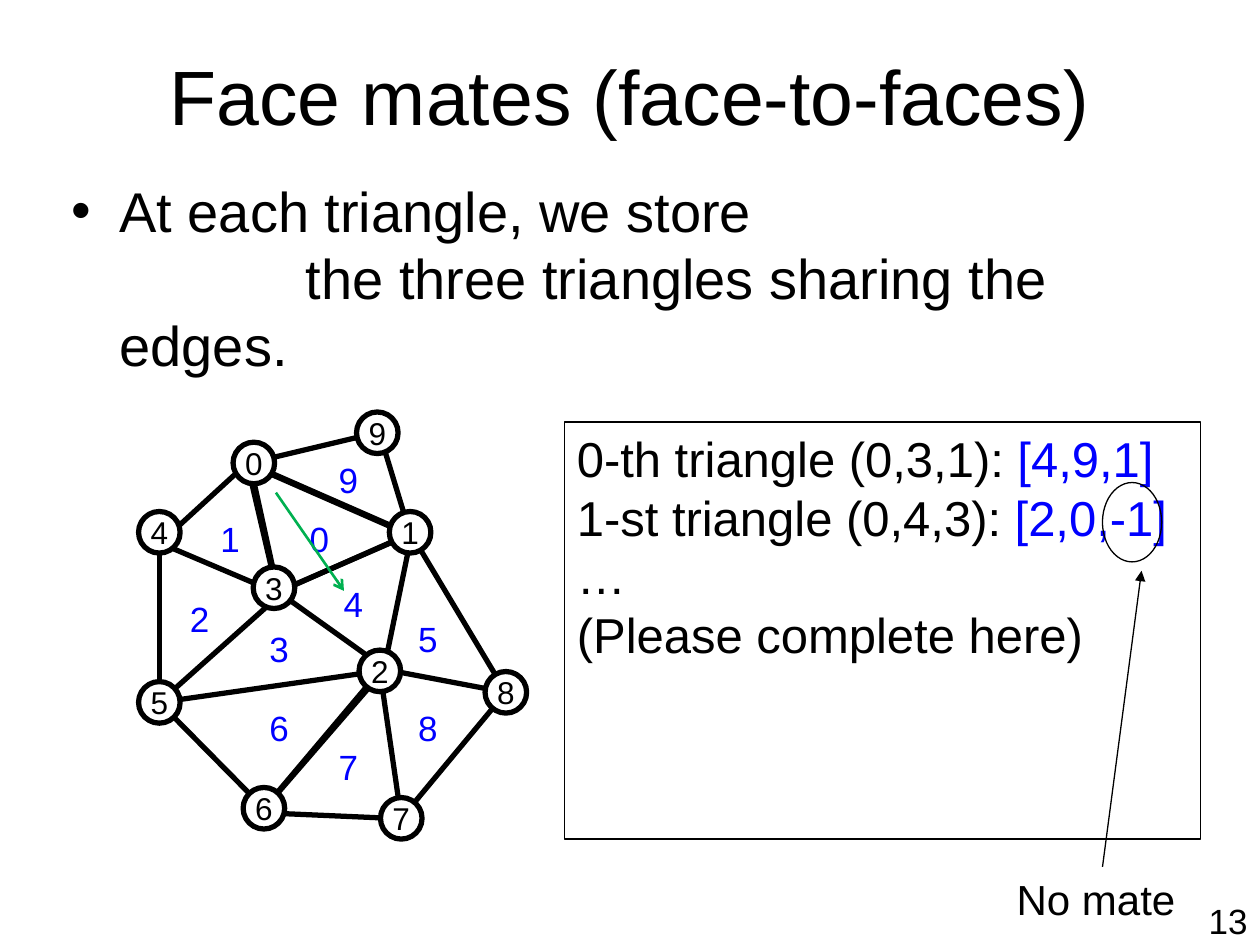
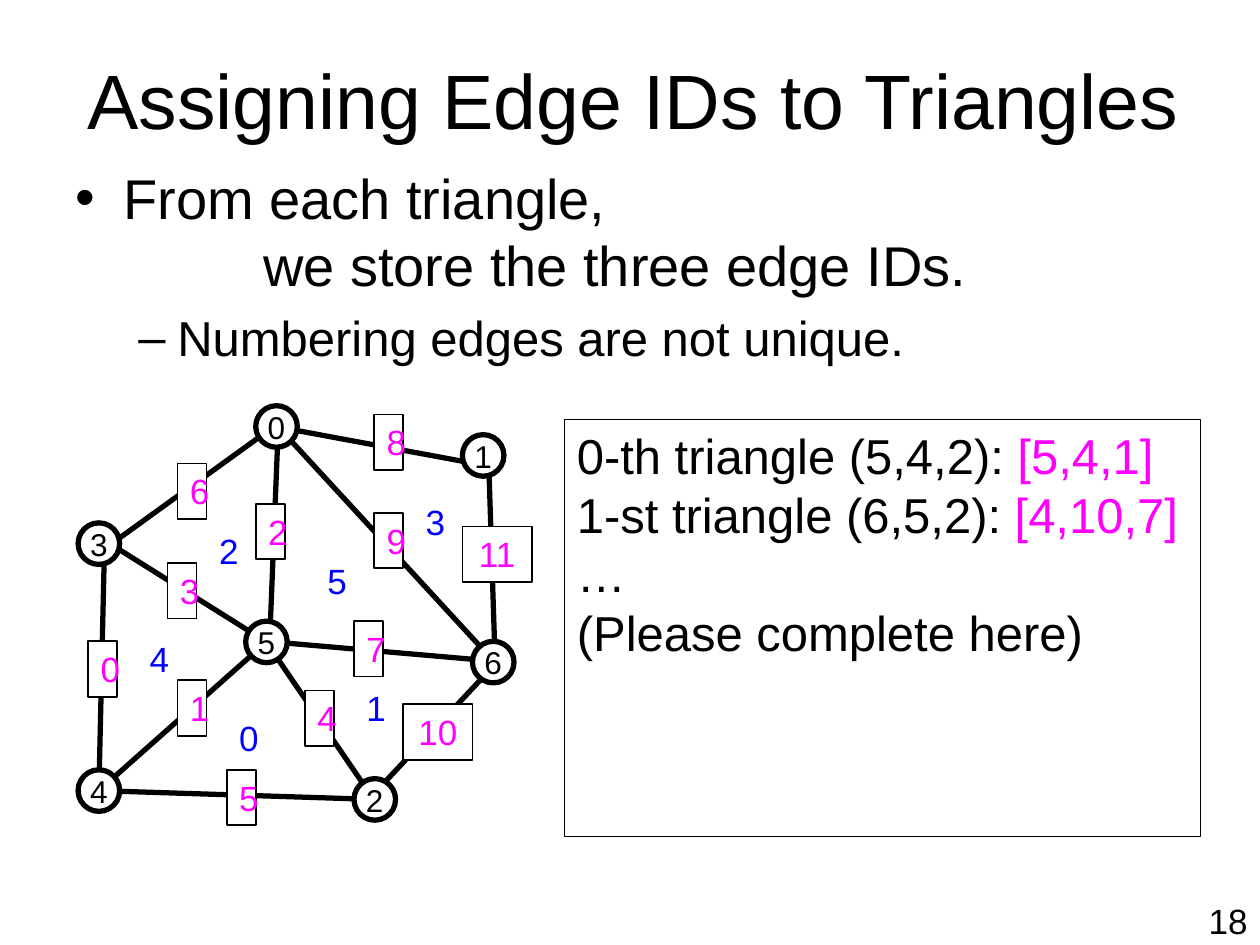
import dataclasses

import lxml.etree
import pptx
import pptx.dml.color
import pptx.enum.shapes
import pptx.enum.text
import pptx.oxml.ns
import pptx.util

SHAPE = pptx.enum.shapes.MSO_SHAPE
ALIGN = pptx.enum.text.PP_ALIGN
MIDDLE = pptx.enum.text.MSO_ANCHOR.MIDDLE
TOP = pptx.enum.text.MSO_ANCHOR.TOP
GROW = pptx.enum.text.MSO_AUTO_SIZE.SHAPE_TO_FIT_TEXT
qn = pptx.oxml.ns.qn
COLS = 100
NODE = 3.3


@dataclasses.dataclass(frozen=True)
class Theme:
    font: str = "Arial"
    ink: str = "000000"
    paper: str = "FFFFFF"
    face: str = "0000FF"
    edge: str = "FF00FF"
    hint: str = "00B050"
    title: int = 44
    body: int = 32
    sub: int = 28
    note: int = 24
    label: int = 20
    node: int = 18
    thick: float = 3
    hair: float = 0.75


class Deck:
    """Draws on the current slide; lengths are cells, 100 across and 75 down."""

    def __init__(self, theme):
        self.theme = theme
        self.file = pptx.Presentation()
        self.file.slide_width = pptx.util.Inches(10)
        self.file.slide_height = pptx.util.Inches(7.5)
        self.cell = self.file.slide_width // COLS

    def start(self, title, left, top, page):
        self.slide = self.file.slides.add_slide(self.file.slide_layouts[6])
        self.shapes = self.slide.shapes
        theme = self.theme
        self.text(title, (left, top, 90, 12.5), theme.title, align=ALIGN.CENTER,
                  anchor=MIDDLE, wrap=True)
        self.text(str(page), (76.7, 70.9, 23.3, 5.2), theme.label,
                  align=ALIGN.RIGHT, wrap=True)

    def size(self, *cells):
        return [pptx.util.Emu(round(n * self.cell)) for n in cells]

    def color(self, name):
        return pptx.dml.color.RGBColor.from_string(name)

    def style(self, run, size, color):
        run.font.name = self.theme.font
        run.font.size = pptx.util.Pt(size)
        run.font.color.rgb = self.color(color)

    def label(self, shape, words, size, color, align, anchor, wrap):
        frame = shape.text_frame
        frame.text = words
        frame.word_wrap = wrap
        frame.vertical_anchor = anchor
        para = frame.paragraphs[0]
        para.alignment = align
        self.style(para.runs[0], size, color)

    def text(self, words, place, size, color=None, align=ALIGN.LEFT,
             anchor=TOP, wrap=False):
        box = self.shapes.add_textbox(*self.size(*place))
        self.label(box, words, size, color or self.theme.ink, align, anchor, wrap)
        if not wrap:
            box.text_frame.auto_size = GROW

    def stroke(self, line, width, color=None):
        line.color.rgb = self.color(color or self.theme.ink)
        line.width = pptx.util.Pt(width)

    def shape(self, kind, place, width, filled=True):
        shape = self.shapes.add_shape(kind, *self.size(*place))
        shape.shadow.inherit = False
        if filled:
            shape.fill.solid()
            shape.fill.fore_color.rgb = self.color(self.theme.paper)
        else:
            shape.fill.background()
        self.stroke(shape.line, width)
        return shape

    def line(self, start, end, width, color=None, head=None):
        kind = pptx.enum.shapes.MSO_CONNECTOR.STRAIGHT
        link = self.shapes.add_connector(kind, *self.size(*start, *end))
        self.stroke(link.line, width, color)
        props = link.element.spPr
        if head:
            lxml.etree.SubElement(props.find(qn("a:ln")), qn("a:tailEnd"), type=head)
        lxml.etree.SubElement(props, qn("a:effectLst"))

    def outline(self, points, close=True):
        first, *rest = [self.size(*point) for point in points]
        route = self.shapes.build_freeform(*first)
        route.add_line_segments(rest, close=close)
        shape = route.convert_to_shape()
        shape.shadow.inherit = False
        shape.fill.background()
        self.stroke(shape.line, self.theme.thick)

    def links(self, pairs, nodes):
        """Joins pairs whose ends are node names or plain points."""
        def spot(end):
            if isinstance(end, str):
                return [n + NODE / 2 for n in nodes[end]]
            return end

        for start, end in pairs:
            self.line(spot(start), spot(end), self.theme.thick)

    def nodes(self, nodes):
        for name, place in nodes.items():
            dot = self.shape(SHAPE.OVAL, (*place, NODE, NODE), self.theme.thick)
            frame = dot.text_frame
            frame.margin_left = frame.margin_right = 0
            frame.margin_top = frame.margin_bottom = 0
            self.label(dot, name, self.theme.node, self.theme.ink,
                       ALIGN.CENTER, MIDDLE, False)

    def faces(self, faces):
        for name, place in faces.items():
            self.text(name, (*place, 3.6, 4.3), self.theme.label, self.theme.face)

    def tags(self, tags):
        for name, place in tags.items():
            width = 2.3 if len(name) == 1 else 5.5
            tag = self.shape(SHAPE.RECTANGLE, (*place, width, 4.4), 1)
            self.label(tag, name, self.theme.label, self.theme.edge,
                       ALIGN.CENTER, TOP, True)

    def bullets(self, place, items):
        """Each item holds words, type size, left margin, first indent and mark."""
        box = self.shapes.add_textbox(*self.size(*place))
        frame = box.text_frame
        frame.word_wrap = True
        frame.text = "\n".join(item[0] for item in items)
        for para, (_, size, left, indent, mark) in zip(frame.paragraphs, items):
            self.style(para.runs[0], size, self.theme.ink)
            para.space_before = pptx.util.Pt(size * 0.2 if mark else 0)
            props = para._p.get_or_add_pPr()
            margin, first = self.size(left, indent)
            props.set("marL", str(margin))
            props.set("indent", str(first))
            if mark:
                lxml.etree.SubElement(props, qn("a:buFont"), typeface=self.theme.font)
                lxml.etree.SubElement(props, qn("a:buChar"), char=mark)

    def panel(self, top, rows, color):
        box = self.shape(SHAPE.RECTANGLE, (44.8, top, 50.5, 33.1),
                         self.theme.hair, filled=False)
        frame = box.text_frame
        frame.word_wrap = True
        frame.vertical_anchor = TOP
        rows = rows + [("…", ""), ("(Please complete here)", "")]
        frame.text = "\n".join(lead for lead, _ in rows)
        for para, (_, value) in zip(frame.paragraphs, rows):
            para.alignment = ALIGN.LEFT
            self.style(para.runs[0], self.theme.sub, self.theme.ink)
            if value:
                run = para.add_run()
                run.text = value
                self.style(run, self.theme.sub, color)


def mates(deck):
    theme = deck.theme
    deck.start("Face mates (face-to-faces)", 5, 1.3, 13)
    deck.bullets((4.7, 13.5, 93.8, 14.6), [
        ("At each triangle, we store", theme.body, 3.8, -3.8, "•"),
        ("the three triangles sharing the edges.", theme.body, 3.8, 14.8, None),
    ])
    nodes = {
        "0": (18.5, 35.1), "1": (30.9, 40.6), "2": (28.5, 51.6), "3": (20.1, 45),
        "4": (11, 40.6), "5": (11, 54.1), "6": (19.3, 62.5), "7": (30.2, 63.3),
        "8": (38.5, 53.3), "9": (28.3, 32.7),
    }
    for points in (
        [(19.6, 36.8), (30.1, 34.3), (32.6, 42.5)],
        [(19.8, 36.6), (22.1, 47.1), (12.7, 43.1)],
        [(19.6, 36.7), (22, 47), (32.6, 42.4)],
        [(30.5, 53), (22.1, 47), (32.7, 42.3)],
    ):
        deck.outline(points)
    deck.outline([(30.3, 53.4), (20.7, 64.5), (32.2, 65)], close=False)
    deck.links([((21.9, 47.5), "5"), ("5", "2"), ("4", "5"), ("5", "6"), ("6", "2"),
                ("2", "7"), ((30.9, 53.2), "8"), ("1", "8"), ("7", "8")], nodes)
    deck.nodes(nodes)
    deck.panel(33.5, [("0-th triangle (0,3,1): ", "[4,9,1]"),
                      ("1-st triangle (0,4,3): ", "[2,0,-1]")], theme.face)
    deck.faces({
        "0": (23.6, 40.6), "1": (16.5, 40.6), "2": (14.1, 46.9), "3": (20.4, 49.3),
        "4": (26.3, 45.7), "5": (32.2, 48.5), "6": (20.4, 55.6), "7": (25.9, 58.7),
        "8": (32.2, 55.6), "9": (25.9, 35.9),
    })
    deck.shape(SHAPE.OVAL, (87.5, 38.3, 4.7, 6.3), theme.hair, filled=False)
    deck.line((87.5, 68.8), (90.6, 45.3), theme.hair, head="triangle")
    deck.text("No mate", (79.7, 68.8, 14.6, 5), theme.note)
    deck.line((21.9, 39.1), (27.3, 46.9), 1.5, theme.hint, head="arrow")


def edges(deck):
    theme = deck.theme
    deck.start("Assigning Edge IDs to Triangles", 5.3, 1.6, 18)
    deck.bullets((5, 12.5, 90, 18), [
        ("From each triangle,", theme.body, 3.8, -3.8, "•"),
        ("we store the three edge IDs.", theme.body, 3.8, 11.1, None),
        ("Numbering edges are not unique.", theme.sub, 8.1, -3.1, "–"),
    ])
    nodes = {
        "0": (20.3, 32.2), "1": (36.7, 34.5), "2": (28.1, 61.8), "3": (6.2, 41.5),
        "4": (6.2, 61.1), "5": (19.5, 49.3), "6": (37.5, 50.9),
    }
    for points in (
        [(22.1, 33.6), (21.4, 51.1), (8.8, 43.2)],
        [(39.3, 52.6), (38.8, 37), (22.1, 33.9)],
        [(29.5, 63.2), (21.1, 50.9), (39.5, 52.5)],
    ):
        deck.outline(points)
    deck.links([("5", "4"), ("4", "2"), ((8.3, 43.1), "4")], nodes)
    deck.nodes(nodes)
    deck.faces({
        "0": (18, 56.4), "1": (28.1, 54), "2": (16.4, 41.5), "3": (32.8, 39.2),
        "4": (10.9, 50.1), "5": (25, 43.9),
    })
    deck.tags({
        "0": (7, 50.9), "1": (14.1, 54), "2": (20.3, 40), "3": (13.3, 44.7),
        "4": (24.2, 54.8), "5": (18, 61.1), "6": (14.1, 36.8), "7": (28.1, 49.3),
        "8": (29.7, 32.9), "9": (29.7, 40.7), "10": (32, 55.9), "11": (36.7, 41.8),
    })
    deck.panel(33.3, [("0-th triangle (5,4,2): ", "[5,4,1]"),
                      ("1-st triangle (6,5,2): ", "[4,10,7]")], theme.edge)


def main():
    deck = Deck(Theme())
    mates(deck)
    edges(deck)
    deck.file.save("out.pptx")


if __name__ == "__main__":
    main()
